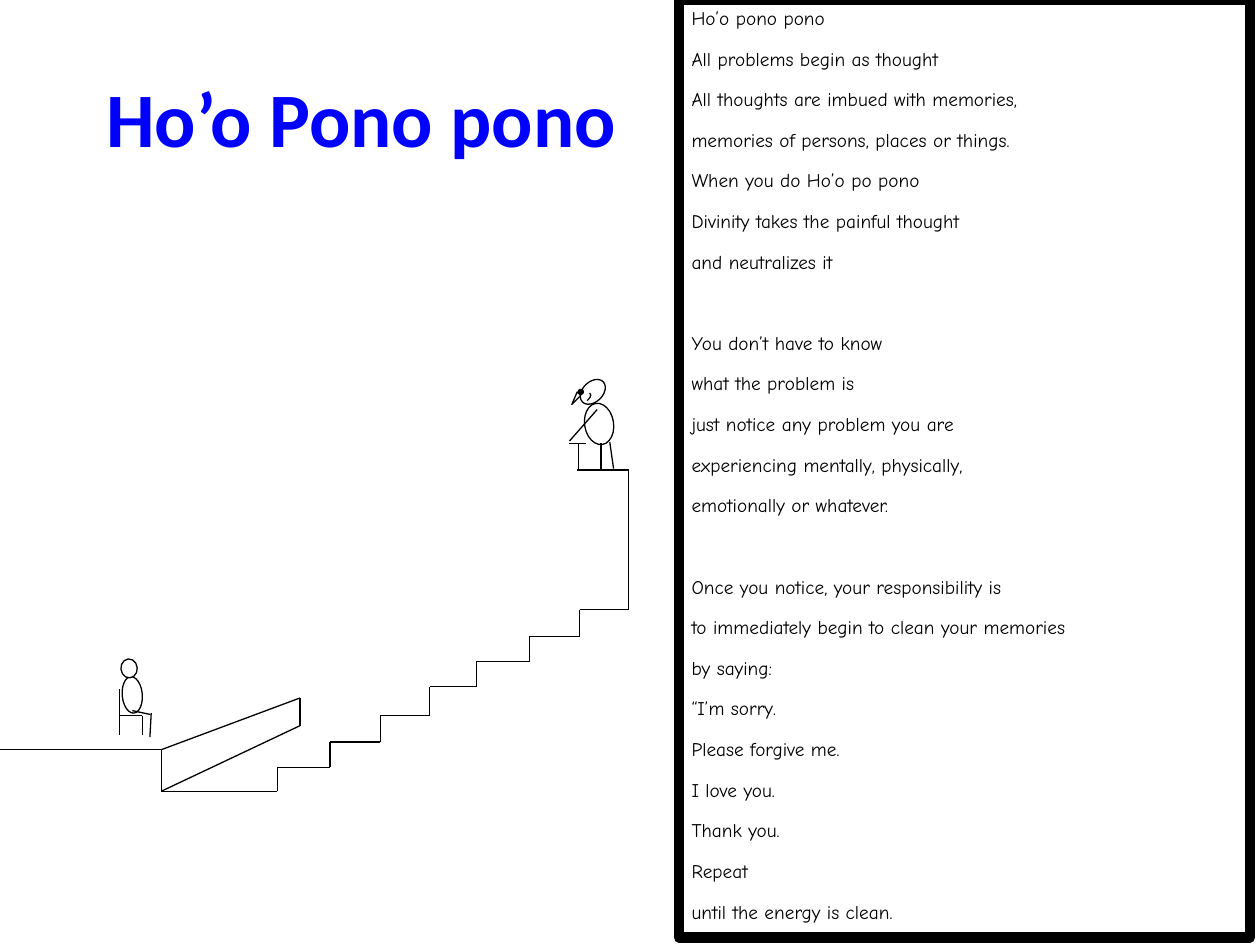
from dataclasses import dataclass
from itertools import pairwise

from lxml.etree import SubElement
from pptx import Presentation
from pptx.dml.color import RGBColor
from pptx.enum.shapes import MSO_CONNECTOR as Connector, MSO_SHAPE as Shape
from pptx.enum.text import MSO_ANCHOR as Anchor, MSO_AUTO_SIZE as AutoSize, PP_ALIGN as Align
from pptx.oxml.ns import qn
from pptx.util import Inches, Pt


@dataclass(frozen=True)
class Theme:
    ink: RGBColor = RGBColor(0, 0, 0)
    paper: RGBColor = RGBColor(255, 255, 255)
    accent: RGBColor = RGBColor(0, 0, 255)
    title_font: str = "Calibri"
    body_font: str = "Comic Neue"
    title_size: float = 44
    body_size: float = 11
    thin: float = 0.75
    thick: float = 6
    gap: float = 10
    stanza_gap: float = 33.2


class Sketch:
    COLUMNS, ROWS = 100, 75

    def __init__(self, prs, theme):
        self.theme = theme
        self.s = prs.slides.add_slide(prs.slide_layouts[5])
        self.column = prs.slide_width / self.COLUMNS
        self.row = prs.slide_height / self.ROWS

    def point(self, x, y):
        return round(x * self.column), round(y * self.row)

    def box(self, x, y, w, h):
        return *self.point(x, y), *self.point(w, h)

    def add_run(self, p, text, font, size, color, bold=False):
        r = p.add_run()
        r.text = text
        r.font.name, r.font.size, r.font.bold = font, Pt(size), bold
        r.font.color.rgb = color

    def title(self, text, *box):
        t = self.theme
        sp = self.s.shapes.title
        sp.left, sp.top, sp.width, sp.height = self.box(*box)
        tf = sp.text_frame
        tf.vertical_anchor = Anchor.MIDDLE
        p = tf.paragraphs[0]
        p.alignment = Align.CENTER
        self.add_run(p, text, t.title_font, t.title_size, t.accent, True)

    def shape(self, kind, *box, rotation=0, fill=None, weight=None):
        sp = self.s.shapes.add_shape(kind, *self.box(*box))
        sp.rotation = rotation
        sp.shadow.inherit = False
        sp.fill.solid()
        sp.fill.fore_color.rgb = fill or self.theme.paper
        self.outline(sp, weight)
        return sp

    def outline(self, sp, weight=None):
        sp.line.color.rgb = self.theme.ink
        sp.line.width = Pt(weight or self.theme.thin)

    def panel(self, stanzas, *box):
        t = self.theme
        tf = self.shape(Shape.RECTANGLE, *box, weight=t.thick).text_frame
        tf.word_wrap = True
        tf.auto_size = AutoSize.SHAPE_TO_FIT_TEXT
        tf.vertical_anchor = Anchor.TOP
        p = tf.paragraphs[0]
        for i, stanza in enumerate(stanzas):
            for j, text in enumerate(stanza):
                if i or j:
                    p = tf.add_paragraph()
                p.alignment = Align.LEFT
                p.space_after = Pt(t.gap)
                self.add_run(p, text, t.body_font, t.body_size, t.ink)
            if i < len(stanzas) - 1:
                p.space_after = Pt(t.stanza_gap)

    def lines(self, *points):
        for start, end in pairwise(points):
            sp = self.s.shapes.add_connector(
                Connector.STRAIGHT, *self.point(*start), *self.point(*end))
            self.outline(sp)
            SubElement(sp.line._get_or_add_ln().getparent(), qn("a:effectLst"))

    def curve(self, a, b, c, d, steps=8):
        points = []
        for i in range(steps + 1):
            t = i / steps
            u = 1 - t
            points.append(self.point(*(
                u**3 * a[k] + 3 * u * u * t * b[k] + 3 * u * t * t * c[k] + t**3 * d[k]
                for k in (0, 1))))
        builder = self.s.shapes.build_freeform(*points[0])
        builder.add_line_segments(points[1:], close=False)
        sp = builder.convert_to_shape()
        sp.shadow.inherit = False
        sp.fill.background()
        self.outline(sp)


STANZAS = [
    ["Ho’o pono pono", "All problems begin as thought",
     "All thoughts are imbued with memories,", "memories of persons, places or things.",
     "When you do Ho’o po pono", "Divinity takes the painful thought",
     "and neutralizes it"],
    ["You don’t have to know", "what the problem is",
     "just notice any problem you are", "experiencing mentally, physically,",
     "emotionally or whatever."],
    ["Once you notice, your responsibility is",
     "to immediately begin to clean your memories", "by saying:", "“I’m sorry.",
     "Please forgive me.", "I love you.", "Thank you.", "Repeat",
     "until the energy is clean."],
]
STEPS = [(22, 60.9), (26.2, 58.9), (30.2, 56.8), (34.1, 54.5),
         (37.8, 52.5), (42, 50.5), (46, 48.4)]


def draw_sitter(sk):
    sk.lines((9.5, 54.7), (9.5, 58.3))
    sk.lines((9.5, 56.8), (11.3, 56.8), (11.3, 58.3))
    sk.shape(Shape.OVAL, 9.7, 53.7, 1.6, 2.9, rotation=355)
    sk.lines((10.5, 56.4), (11.9, 56.7))
    sk.lines((12, 56.6), (11.9, 58.5))
    sk.shape(Shape.OVAL, 9.6, 52.3, 1.3, 1.5, rotation=355)


def draw_stairs(sk):
    climb = [(12.8, 62.8)]
    for x, y in STEPS:
        climb += [(x, climb[-1][1]), (x, y)]
    sk.lines((0, 59.5), (12.8, 59.5), *climb,
             (49.9, 48.4), (49.9, 37.3), (45.8, 37.3))
    sk.lines((12.8, 59.5), (23.8, 55.4), (23.8, 57.6), (12.8, 62.8))


def draw_watcher(sk):
    sk.lines((45.9, 35.2), (45.9, 37.3))
    sk.shape(Shape.OVAL, 46.4, 32, 2.3, 3.3, rotation=350.9)
    sk.shape(Shape.OVAL, 45.9, 30.3, 2.3, 1.6, rotation=315.9)
    beak = sk.shape(Shape.ISOSCELES_TRIANGLE, 45.1, 31.4, 1, 0.4, rotation=315.2)
    beak.adjustments[0] = 1
    sk.curve((46.6, 31.8), (46.8, 31.6), (47, 31.4), (46.8, 31.2))
    sk.shape(Shape.OVAL, 45.9, 30.9, 0.4, 0.4, rotation=315, fill=sk.theme.ink)
    sk.lines((47.4, 32.5), (45.2, 35))
    sk.lines((47.7, 35.2), (47.7, 37.3))
    sk.lines((48.4, 35.1), (48.7, 37.2))
    sk.lines((45.2, 35.2), (46.5, 35.2))


def main():
    prs = Presentation()
    prs.slide_width, prs.slide_height = Inches(10), Inches(7.5)
    sk = Sketch(prs, Theme())
    sk.title("Ho’o Pono pono", 5, 3, 47.4, 12.5)
    sk.panel(STANZAS, 53.9, 0, 45.3, 74.4)
    draw_sitter(sk)
    draw_stairs(sk)
    draw_watcher(sk)
    prs.save("out.pptx")


if __name__ == "__main__":
    main()
